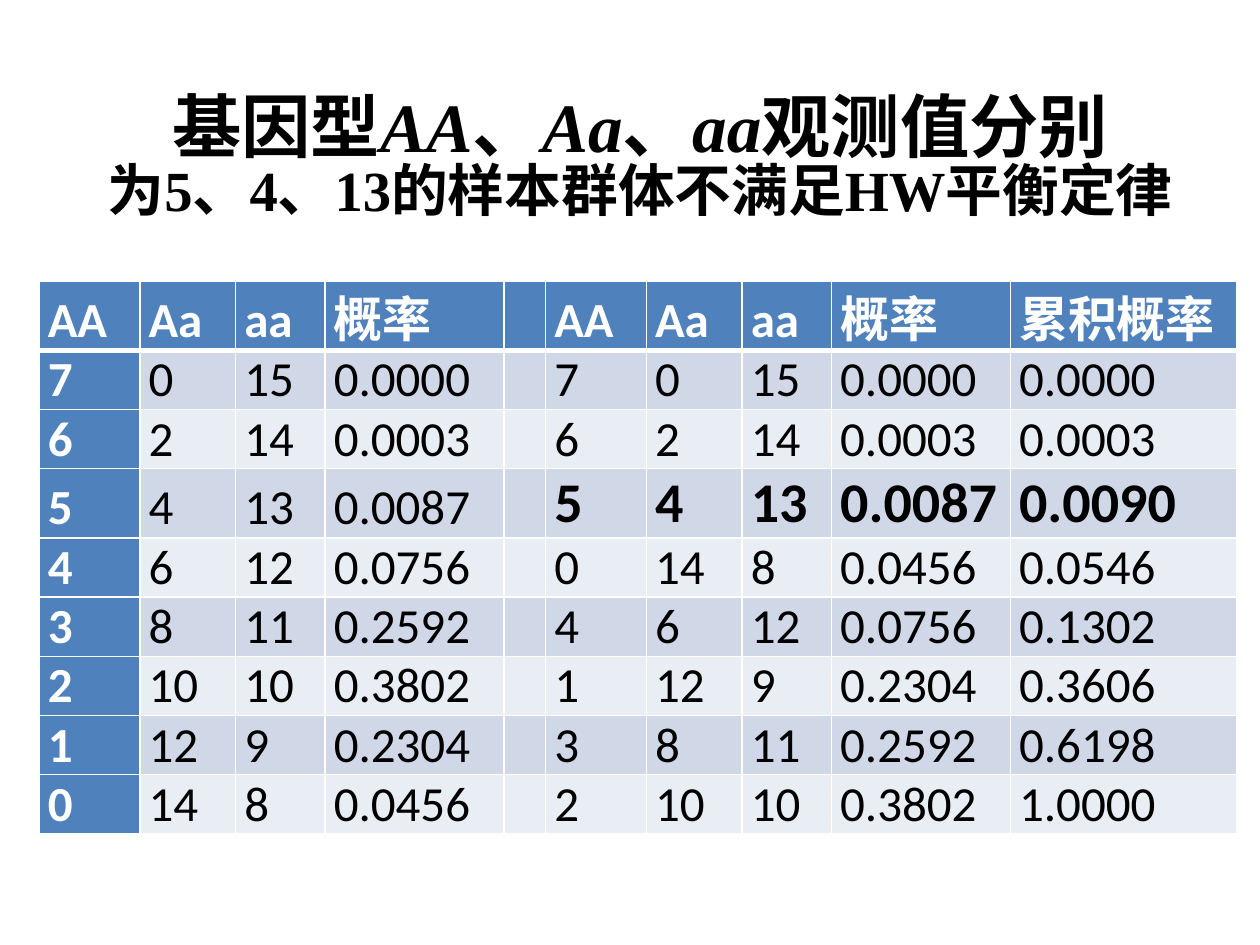
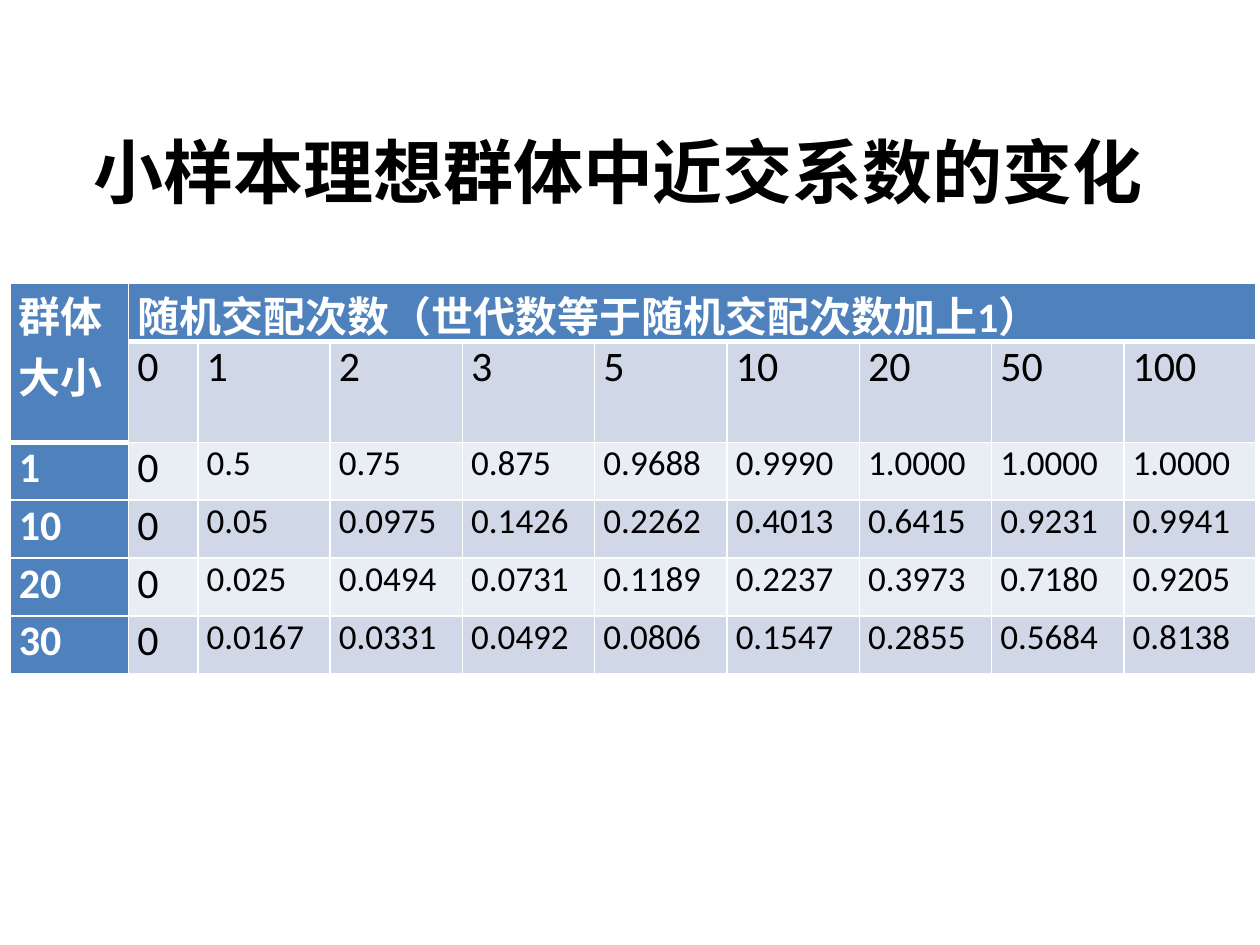
from lxml.etree import SubElement
from pptx import Presentation
from pptx.dml.color import RGBColor
from pptx.enum.text import MSO_ANCHOR, PP_ALIGN
from pptx.oxml import parse_xml
from pptx.oxml.ns import nsdecls, qn
from pptx.util import Inches, Pt

COLOURS = {"text": "000000", "header": "4F81BD", "header_text": "FFFFFF",
           "band_dark": "D0D8E8", "band_light": "E9EDF4", "border": "FFFFFF"}
LATIN, SERIF, CHINESE = "Calibri", "Times New Roman", "Noto Sans CJK SC"


class Slides:
    """Holds the shared style and the current slide."""

    def __init__(self):
        self.deck = Presentation()
        self.deck.slide_width, self.deck.slide_height = Inches(10), Inches(7.5)
        self.page = None

    def new_page(self):
        self.page = self.deck.slides.add_slide(self.deck.slide_layouts[6])

    def span(self, para, text, colour="text", **format_values):
        span = para.add_run()
        span.text = text
        for name, value in format_values.items():
            setattr(span.font, name, value)
        span.font.color.rgb = RGBColor.from_string(COLOURS[colour])
        SubElement(span.font._element, qn("a:ea")).set("typeface", CHINESE)

    def title(self, place, lines, font, spacing=None):
        """Each line is a size and a list of (text, italic) pieces."""
        box = self.page.shapes.add_textbox(*map(Inches, place))
        frame = box.text_frame
        frame.word_wrap, frame.vertical_anchor = True, MSO_ANCHOR.MIDDLE
        para = frame.paragraphs[0]
        para.alignment, para.line_spacing = PP_ALIGN.CENTER, spacing
        for number, (size, pieces) in enumerate(lines):
            if number:
                para.add_line_break()
            for text, italic in pieces:
                self.span(para, text, name=font, size=Pt(size), bold=True, italic=italic)

    def borders(self, cell, top, bottom):
        widths = {"lnL": 1, "lnR": 1, "lnT": top, "lnB": bottom}
        for position, (side, width) in enumerate(widths.items()):
            cell._tc.get_or_add_tcPr().insert(position, parse_xml(
                f'<a:{side} {nsdecls("a")} w="{Pt(width)}"><a:solidFill>'
                f'<a:srgbClr val="{COLOURS["border"]}"/></a:solidFill></a:{side}>'))

    def table(self, left, top, widths, heights, rows, size, anchor,
              merges=(), special=lambda row, column: {}):
        """Top row and first column are headers; the other rows are banded."""
        frame = self.page.shapes.add_table(
            len(rows), len(widths), Inches(left), Inches(top),
            Inches(sum(widths)), Inches(sum(heights)))
        grid = frame.table
        grid.first_row = grid.horz_banding = False
        for column, width in zip(grid.columns, widths):
            column.width = Inches(width)
        for line, height in zip(grid.rows, heights):
            line.height = Inches(height)
        for first, last in merges:
            grid.cell(*first).merge(grid.cell(*last))
        corner = grid.cell(0, 0)
        corner_depth = corner.span_height if corner.is_merge_origin else 1

        for row, texts in enumerate(rows):
            for column, text in enumerate(texts):
                cell = grid.cell(row, column)
                header = row == 0 or column == 0
                band = "band_dark" if row % 2 else "band_light"
                cell.fill.solid()
                cell.fill.fore_color.rgb = RGBColor.from_string(
                    COLOURS["header" if header else band])
                # A heavy rule closes the header
                depth = corner_depth if column == 0 else 1
                end = row + (cell.span_height if cell.is_merge_origin else 1)
                self.borders(cell, 3 if row == depth else 1, 3 if end == depth else 1)
                cell.margin_left = cell.margin_right = Inches(0.07)
                cell.margin_top = cell.margin_bottom = 0
                cell.vertical_anchor = anchor
                if text:
                    style = {"name": LATIN, "size": Pt(size), "bold": header,
                             **special(row, column)}
                    self.span(cell.text_frame.paragraphs[0], text,
                              "header_text" if header else "text", **style)


slides = Slides()

# Slide 1: genotype probabilities, in order of AA and in order of probability
slides.new_page()
slides.title((0.67, 0.52, 8.82, 1.5), [
    (39.6, [("基因型", False), ("AA", True), ("、", False), ("Aa", True),
            ("、", False), ("aa", True), ("观测值分别", False)]),
    (32.4, [("为5、4、13的样本群体不满足HW平衡定律", False)])], SERIF, 0.83)

by_genotype = ["AA Aa aa 概率", "7 0 15 0.0000", "6 2 14 0.0003", "5 4 13 0.0087",
               "4 6 12 0.0756", "3 8 11 0.2592", "2 10 10 0.3802",
               "1 12 9 0.2304", "0 14 8 0.0456"]
by_probability = ["AA Aa aa 概率 累积概率", "7 0 15 0.0000 0.0000",
                  "6 2 14 0.0003 0.0003", "5 4 13 0.0087 0.0090",
                  "0 14 8 0.0456 0.0546", "4 6 12 0.0756 0.1302",
                  "1 12 9 0.2304 0.3606", "3 8 11 0.2592 0.6198",
                  "2 10 10 0.3802 1.0000"]
OBSERVED_ROW = 3
genotype_widths = [0.8, 0.76, 0.71, 1.42]
slides.table(
    0.31, 2.23, genotype_widths + [0.33] + genotype_widths + [1.8],
    [0.55 if row in (0, OBSERVED_ROW) else 0.47 for row in range(9)],
    [a.split() + [""] + b.split() for a, b in zip(by_genotype, by_probability)],
    28, MSO_ANCHOR.BOTTOM,
    special=lambda row, column: {"size": Pt(32), "bold": True}
    if row == OBSERVED_ROW and column > 4 else {})

# Slide 2: inbreeding coefficient by population size and number of matings
slides.new_page()
slides.title((0.2, 0.84, 9.41, 1.02),
             [(40, [("小样本理想群体中近交系数的变化", False)])], CHINESE)
coefficients = ["0 1 2 3 5 10 20 50 100",
                "1 0 0.5 0.75 0.875 0.9688 0.9990 1.0000 1.0000 1.0000",
                "10 0 0.05 0.0975 0.1426 0.2262 0.4013 0.6415 0.9231 0.9941",
                "20 0 0.025 0.0494 0.0731 0.1189 0.2237 0.3973 0.7180 0.9205",
                "30 0 0.0167 0.0331 0.0492 0.0806 0.1547 0.2855 0.5684 0.8138"]
matings, *sizes = [line.split() for line in coefficients]
slides.table(
    0.08, 2.25, [0.94, 0.55] + [1.05] * 8, [0.46] * 6,
    [["群体大小", "随机交配次数（世代数等于随机交配次数加上1）"] + [""] * 8,
     [""] + matings, *sizes],
    24, MSO_ANCHOR.TOP, merges=[((0, 0), (1, 0)), ((0, 1), (0, 9))],
    special=lambda row, column: {"size": Pt(20)} if row > 1 and column > 1 else {})

slides.deck.save("out.pptx")
